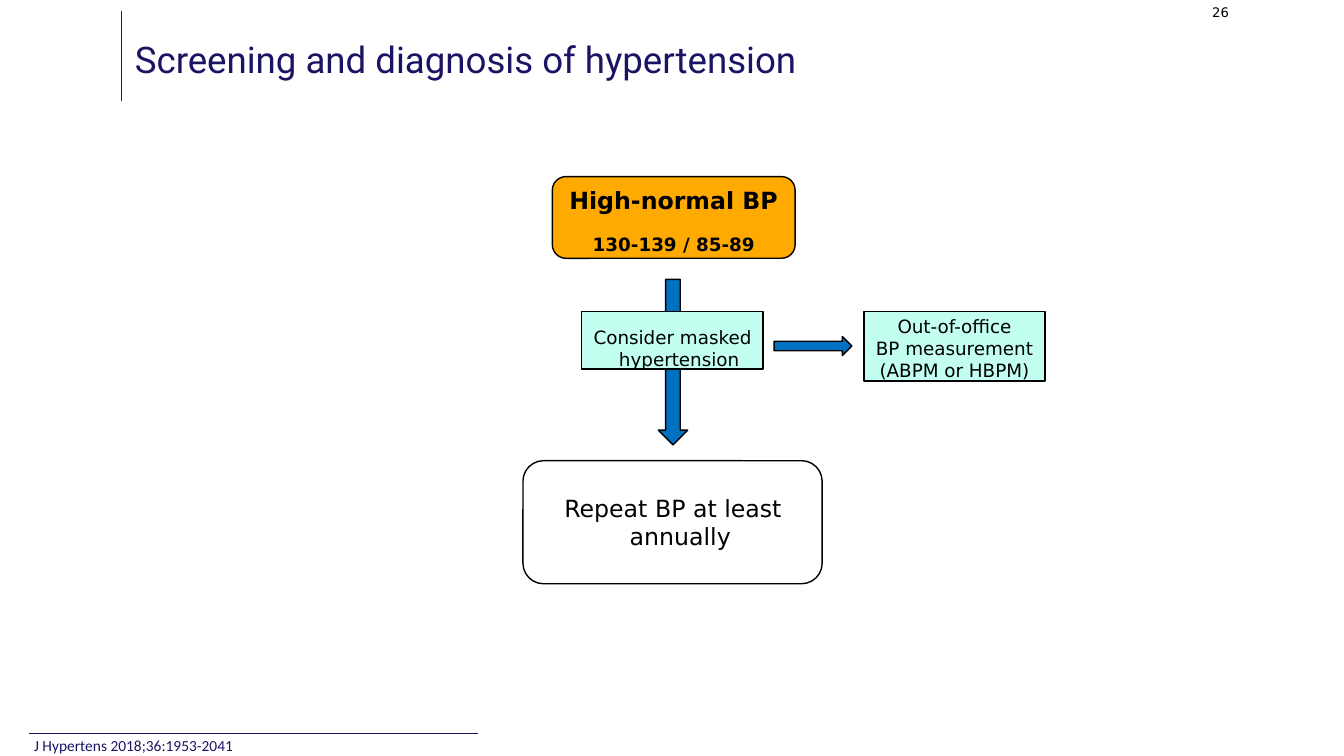
from pptx import Presentation
from pptx.dml.color import RGBColor
from pptx.enum.shapes import MSO_CONNECTOR, MSO_SHAPE
from pptx.enum.text import MSO_ANCHOR, PP_ALIGN
from pptx.util import Cm, Pt
from lxml import etree

NAVY = RGBColor(0x1B, 0x14, 0x65)
BLACK = RGBColor(0x00, 0x00, 0x00)
ORANGE = RGBColor(0xFF, 0xAA, 0x00)
MINT = RGBColor(0xC2, 0xFF, 0xF0)
BLUE = RGBColor(0x00, 0x70, 0xC0)
RECTANGLE = MSO_SHAPE.RECTANGLE
ROUNDED = MSO_SHAPE.ROUNDED_RECTANGLE
DOWN_ARROW = MSO_SHAPE.DOWN_ARROW
RIGHT_ARROW = MSO_SHAPE.RIGHT_ARROW
STRAIGHT = MSO_CONNECTOR.STRAIGHT
TOP, MIDDLE = MSO_ANCHOR.TOP, MSO_ANCHOR.MIDDLE
LEFT, CENTER = PP_ALIGN.LEFT, PP_ALIGN.CENTER
DRAWING = "{http://schemas.openxmlformats.org/drawingml/2006/main}"


def write_text(shape, lines, font_name, color, anchor=TOP, align=LEFT,
               inset_top=0, hanging=None):
    """Write (text, size, bold, space before) lines; hanging is (margin, indent) in cm."""
    frame = shape.text_frame
    frame.word_wrap = True
    frame.vertical_anchor = anchor
    frame.margin_left = frame.margin_right = frame.margin_bottom = 0
    frame.margin_top = Cm(inset_top)
    for index, (text, size, bold, space_before) in enumerate(lines):
        paragraph = frame.add_paragraph() if index else frame.paragraphs[0]
        paragraph.text = text
        paragraph.alignment = align
        paragraph.space_before = Pt(space_before)
        if hanging:
            properties = paragraph._p.get_or_add_pPr()
            properties.set("marL", str(Cm(hanging[0])))
            properties.set("indent", str(Cm(hanging[1])))
        paragraph.font.name = font_name
        paragraph.font.size = Pt(size)
        paragraph.font.bold = bold
        paragraph.font.color.rgb = color


presentation = Presentation()
presentation.slide_width = Cm(33.87)
presentation.slide_height = Cm(19.05)
slide = presentation.slides.add_slide(presentation.slide_layouts[6])

# Rules beside the title and above the citation
for ends in [(3.07, 0.28, 3.07, 2.54), (0.74, 18.47, 12.04, 18.47)]:
    rule = slide.shapes.add_connector(STRAIGHT, *map(Cm, ends))
    rule.line.color.rgb = NAVY
    rule.line.width = Pt(0.5)
    etree.SubElement(rule._element.spPr, DRAWING + "effectLst")

# Title, citation and page number
labels = [
    ((3.4, 0.13, 21.49, 2.67), "Screening and diagnosis of hypertension", 26.2, "Roboto", NAVY, 0.06),
    ((0.86, 18.54, 20.9, 0.51), "J Hypertens 2018;36:1953-2041", 11, "Calibri", NAVY, 0),
    ((30.55, 0.08, 0.6, 0.43), "26", 9.4, "DejaVu Sans", BLACK, 0.04),
]
for place, text, size, font_name, color, inset_top in labels:
    label = slide.shapes.add_textbox(*map(Cm, place))
    write_text(label, [(text, size, False, 0)], font_name, color, MIDDLE, inset_top=inset_top)

# Flow chart, from back to front
steps = [
    (ROUNDED, (13.92, 4.45, 6.12, 2.06), ORANGE,
     [("High-normal BP", 16.9, True, 0), ("130-139 / 85-89", 13.1, True, 13.6)],
     dict(align=CENTER, inset_top=0.14)),
    (DOWN_ARROW, (16.59, 7.04, 0.74, 4.17), BLUE, [], {}),
    (ROUNDED, (13.18, 11.61, 7.54, 3.1), None,
     [("Repeat BP at least\vannually", 16.9, False, 0)],
     dict(anchor=MIDDLE, hanging=(2.54, -1.65))),
    (RECTANGLE, (14.66, 7.85, 4.57, 1.45), MINT,
     [("Consider masked\vhypertension", 13.1, False, 0)],
     dict(inset_top=0.38, hanging=(0.94, -0.64))),
    (RIGHT_ARROW, (19.51, 8.48, 1.96, 0.48), BLUE, [], {}),
    (RECTANGLE, (21.77, 7.85, 4.57, 1.75), MINT,
     [("Out-of-office\vBP measurement\v(ABPM or HBPM)", 13.1, False, 0)],
     dict(align=CENTER, inset_top=0.1)),
]
for kind, place, fill, lines, layout in steps:
    step = slide.shapes.add_shape(kind, *map(Cm, place))
    step.shadow.inherit = False
    if fill is None:
        step.fill.background()
    else:
        step.fill.solid()
        step.fill.fore_color.rgb = fill
    step.line.color.rgb = BLACK
    step.line.width = Pt(1)
    write_text(step, lines, "DejaVu Sans", BLACK, **layout)

presentation.save("out.pptx")
